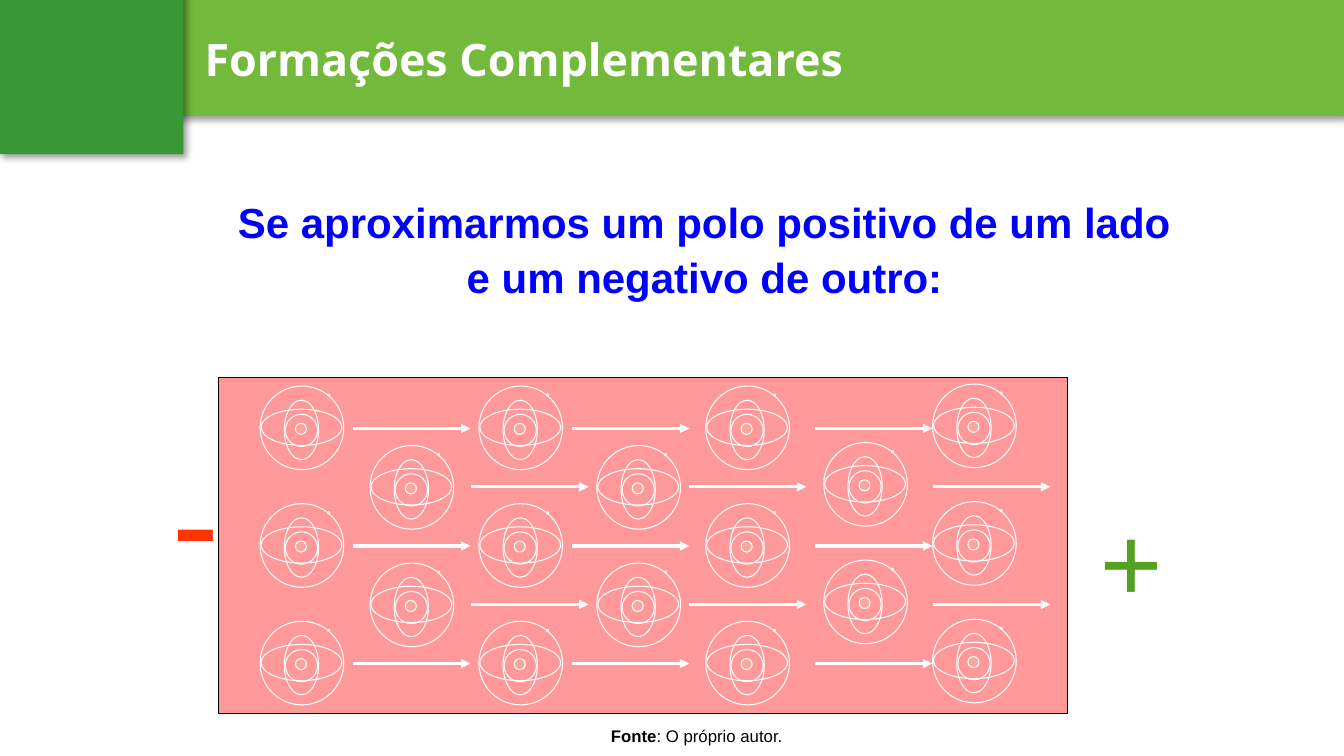
"""Builds the slide on atoms polarised between a negative and a positive pole."""
from dataclasses import dataclass
from typing import Optional

from lxml.etree import SubElement
from pptx import Presentation
from pptx.dml.color import RGBColor
from pptx.enum.shapes import MSO_CONNECTOR as Connector, MSO_SHAPE as Preset
from pptx.enum.text import MSO_ANCHOR as Anchor, MSO_AUTO_SIZE as AutoSize, PP_ALIGN as Align
from pptx.oxml.ns import qn
from pptx.util import Inches, Pt


@dataclass(frozen=True)
class Theme:
    """Colours, fonts and type sizes."""
    band: str = "72B93C"
    corner: str = "399736"
    material: str = "FF9999"
    electron: str = "FF9933"
    nucleus: str = "FBA69D"
    white: str = "FFFFFF"
    black: str = "000000"
    statement: str = "0000FF"
    positive: str = "54A021"
    negative: str = "FF3300"
    title_font: str = "Open Sans"
    body_font: str = "Arial"
    sign_font: str = "Times New Roman"
    title_size: int = 32
    statement_size: int = 30
    plus_size: int = 80
    minus_size: int = 96
    source_size: int = 12


@dataclass(frozen=True)
class Box:
    """A rectangle in inches."""
    left: float
    top: float
    width: float
    height: float

    def lengths(self) -> tuple:
        """Give the four lengths for python-pptx."""
        return tuple(Inches(n) for n in (self.left, self.top, self.width, self.height))


@dataclass(frozen=True)
class Part:
    """One ellipse of an atom, placed from the atom's corner."""
    box: Box
    fill: Optional[str] = None


@dataclass(frozen=True)
class Column:
    """A column of equally spaced rows."""
    left: float
    top: float
    rows: int


@dataclass(frozen=True)
class Label:
    """A text with its box and look; each piece is wording and boldness."""
    box: Box
    pieces: tuple
    font: str
    size: int
    color: str
    align: Optional[Align] = None
    anchor: Anchor = Anchor.TOP
    spacing: Optional[float] = None
    inset: float = 0.05
    grows: bool = True
    shadow: bool = False


THEME = Theme()
ROW_PITCH = 3.5 / 3
ARROW_LENGTH = ROW_PITCH

ATOM_PARTS = (
    Part(Box(0.25, 0.28, 0.32, 0.32)),
    Part(Box(0.24, 0.14, 0.34, 0.59)),
    Part(Box(0.01, 0.23, 0.8, 0.36)),
    Part(Box(0, 0, 0.83, 0.83)),
    Part(Box(0.67, 0.08, 0.02, 0.02), THEME.electron),
    Part(Box(0.35, 0.37, 0.11, 0.11), THEME.nucleus),
)
ATOM_COLUMNS = (
    Column(2.58, 3.83, 3), Column(4.75, 3.83, 3), Column(3.67, 4.42, 2),
    Column(7, 3.83, 3), Column(5.92, 4.42, 2),
    Column(9.25, 3.81, 3), Column(8.17, 4.39, 2),
)
ARROW_COLUMNS = (
    Column(3.5, 4.25, 3), Column(4.67, 4.83, 2), Column(5.67, 4.25, 3),
    Column(6.83, 4.83, 2), Column(8.08, 4.25, 3), Column(9.25, 4.83, 2),
)
TITLE = Label(Box(1.93, 0.26, 10.82, 0.64), (("Formações Complementares", True),),
              THEME.title_font, THEME.title_size, THEME.white,
              anchor=Anchor.MIDDLE, grows=False, shadow=True)
SIGNS = (
    Label(Box(10.81, 4.83, 0.81, 1.43), (("+", True),),
          THEME.sign_font, THEME.plus_size, THEME.positive),
    Label(Box(1.62, 4.25, 0.65, 1.7), (("-", True),),
          THEME.sign_font, THEME.minus_size, THEME.negative),
)
STATEMENT = Label(
    Box(2.24, 1.85, 9.5, 1.16),
    (("Se aproximarmos um polo positivo de um lado e um negativo de outro:", True),),
    THEME.body_font, THEME.statement_size, THEME.statement, Align.CENTER, spacing=1.1)
SOURCE = Label(Box(5.7, 7.1, 2.42, 0.4), (("Fonte", True), (": O próprio autor.", False)),
               THEME.body_font, THEME.source_size, THEME.black, Align.CENTER, inset=0.1)


def rgb(color: str) -> RGBColor:
    """Turn a hexadecimal colour into an RGBColor."""
    return RGBColor.from_string(color)


def fill_shadow(effects) -> None:
    """Put a soft shadow to the lower right in an effect list."""
    outer = SubElement(effects, qn("a:outerShdw"), blurRad=str(Pt(5)), dist=str(Pt(3)),
                       dir=str(45 * 60000), algn="tl", rotWithShape="0")
    color = SubElement(outer, qn("a:srgbClr"), val=THEME.black)
    SubElement(color, qn("a:alpha"), val="40000")


def draw_shape(shapes, preset: Preset, box: Box, fill: Optional[str] = None,
               line: Optional[str] = None, shadow: bool = False) -> None:
    """Draw a preset shape."""
    shape = shapes.add_shape(preset, *box.lengths())
    shape.shadow.inherit = False
    if shadow:
        fill_shadow(shape._element.spPr.find(qn("a:effectLst")))
    if fill:
        shape.fill.solid()
        shape.fill.fore_color.rgb = rgb(fill)
    else:
        shape.fill.background()
    if line:
        shape.line.color.rgb = rgb(line)
        shape.line.width = Pt(0.75)
    else:
        shape.line.fill.background()


def draw_label(shapes, label: Label) -> None:
    """Draw a text box."""
    frame = shapes.add_textbox(*label.box.lengths()).text_frame
    frame.word_wrap = True
    frame.auto_size = AutoSize.SHAPE_TO_FIT_TEXT if label.grows else AutoSize.NONE
    frame.vertical_anchor = label.anchor
    frame.margin_top = frame.margin_bottom = Inches(label.inset)
    paragraph = frame.paragraphs[0]
    paragraph.alignment = label.align
    paragraph.line_spacing = label.spacing
    for wording, bold in label.pieces:
        run = paragraph.add_run()
        run.text = wording
        run.font.size = Pt(label.size)
        run.font.bold = bold
        run.font.color.rgb = rgb(label.color)
        if label.shadow:
            fill_shadow(SubElement(run.font._element, qn("a:effectLst")))
        run.font.name = label.font


def draw_atom(shapes, left: float, top: float) -> None:
    """Draw an atom as a group of ellipses."""
    atom = shapes.add_group_shape().shapes
    for part in ATOM_PARTS:
        box = Box(left + part.box.left, top + part.box.top, part.box.width, part.box.height)
        draw_shape(atom, Preset.OVAL, box, part.fill, THEME.white)


def draw_arrow(shapes, left: float, top: float) -> None:
    """Draw an arrow to the right."""
    arrow = shapes.add_connector(Connector.STRAIGHT, Inches(left), Inches(top),
                                 Inches(left + ARROW_LENGTH), Inches(top))
    arrow.line.color.rgb = rgb(THEME.white)
    arrow.line.width = Pt(2.25)
    properties = arrow._element.spPr
    SubElement(properties.find(qn("a:ln")), qn("a:tailEnd"), type="triangle")
    SubElement(properties, qn("a:effectLst"))


def draw_columns(shapes, columns: tuple, draw) -> None:
    """Draw one item at every row of every column."""
    for column in columns:
        for row in range(column.rows):
            draw(shapes, column.left, column.top + row * ROW_PITCH)


def main() -> None:
    """Build and save the slide."""
    deck = Presentation()
    deck.slide_width, deck.slide_height = Inches(13.33), Inches(7.5)
    shapes = deck.slides.add_slide(deck.slide_layouts[6]).shapes
    draw_shape(shapes, Preset.RECTANGLE, Box(1.41, 0, 11.93, 1.15), THEME.band, shadow=True)
    draw_label(shapes, TITLE)
    draw_shape(shapes, Preset.RECTANGLE, Box(0, -0.08, 1.82, 1.61), THEME.corner, shadow=True)
    draw_shape(shapes, Preset.RECTANGLE, Box(2.17, 3.75, 8.42, 3.33), THEME.material, THEME.black)
    draw_columns(shapes, ATOM_COLUMNS, draw_atom)
    signs = shapes.add_group_shape().shapes
    for sign in SIGNS:
        draw_label(signs, sign)
    draw_columns(shapes.add_group_shape().shapes, ARROW_COLUMNS, draw_arrow)
    draw_label(shapes, STATEMENT)
    draw_label(shapes, SOURCE)
    deck.save("out.pptx")


if __name__ == "__main__":
    main()
